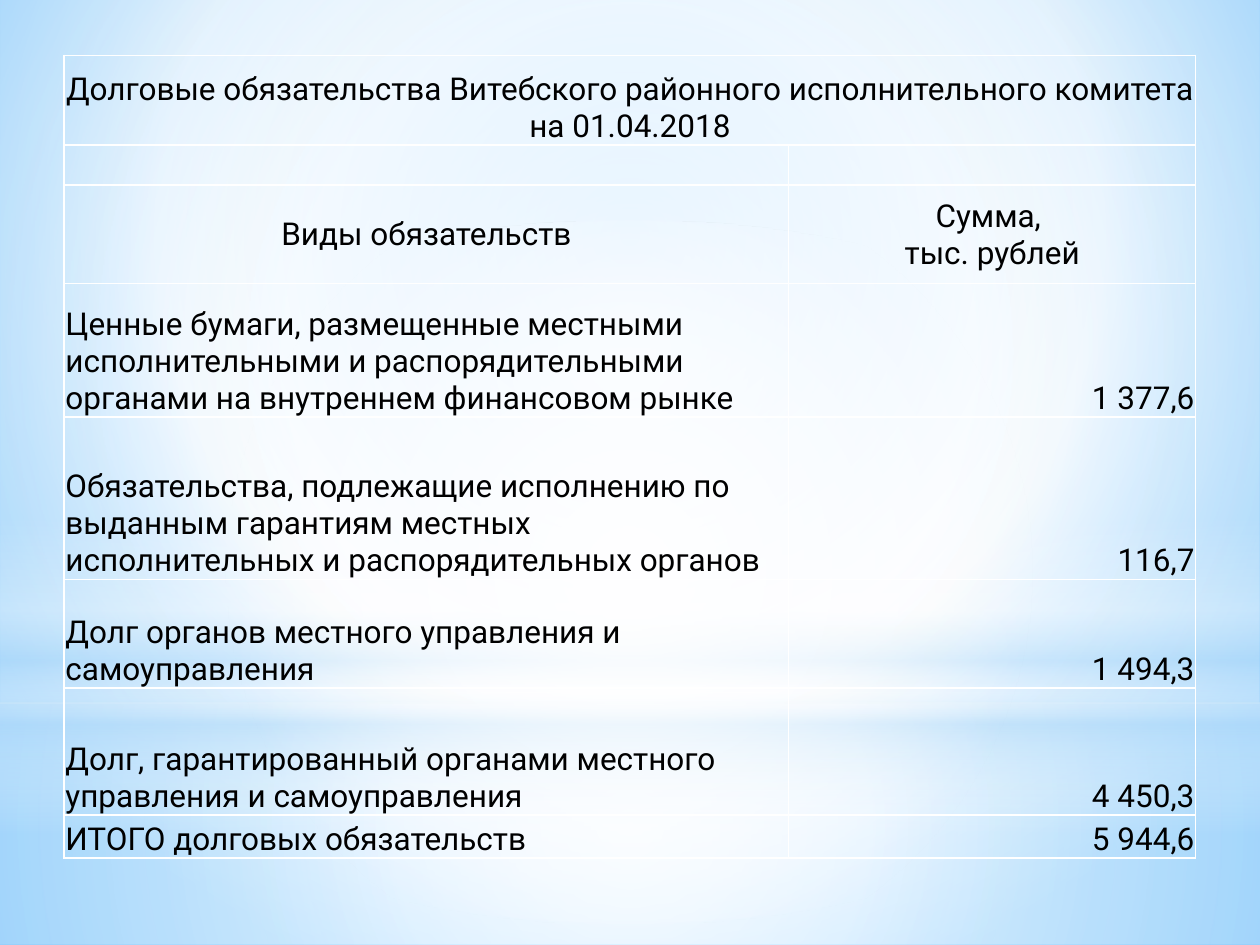
from lxml.etree import SubElement
from pptx import Presentation
from pptx.dml.color import RGBColor
from pptx.enum.shapes import MSO_SHAPE as Shape
from pptx.enum.text import MSO_ANCHOR as Anchor, PP_ALIGN as Align
from pptx.oxml import parse_xml
from pptx.oxml.ns import nsdecls, qn
from pptx.util import Inches, Pt

BLACK = RGBColor(0x00, 0x00, 0x00)
WHITE = RGBColor(0xFF, 0xFF, 0xFF)
SKY = RGBColor(0x9E, 0xD5, 0xFF)
DEEP_SKY = RGBColor(0x5B, 0xB9, 0xFF)
PALE_BLUE = RGBColor(0xB4, 0xDC, 0xFA)
FONT = "Roboto"
CENTRE = (50, 50, 50, 50)

COLUMN_WIDTHS = (5.75, 3.23)
ROW_HEIGHTS = (0.71, 0.32, 0.78, 1.06, 1.29, 0.86, 1.01, 0.34)
TITLE = "Долговые обязательства Витебского районного исполнительного комитета на 01.04.2018"
HEADINGS = ("Виды обязательств", "Сумма, \nтыс. рублей")
DEBTS = (
    ("Ценные бумаги, размещенные местными исполнительными и "
     "распорядительными органами на внутреннем финансовом рынке", "1 377,6"),
    ("Обязательства, подлежащие исполнению по выданным гарантиям местных "
     "исполнительных и распорядительных органов", "116,7"),
    ("Долг органов местного управления и самоуправления", "1 494,3"),
    ("Долг, гарантированный органами местного управления и самоуправления", "4 450,3"),
    ("ИТОГО долговых обязательств", "5 944,6"),
)


def set_gradient(fill, stops, focus=None, angle=0):
    """Stops are (position %, colour, opacity %); focus gives a circular gradient."""
    fill.gradient()
    gradient = fill._xPr.find(qn("a:gradFill"))
    for child in list(gradient):
        gradient.remove(child)
    stop_list = SubElement(gradient, qn("a:gsLst"))
    for position, colour, opacity in stops:
        stop = SubElement(stop_list, qn("a:gs"), pos=str(position * 1000))
        tint = SubElement(stop, qn("a:srgbClr"), val=str(colour))
        if opacity < 100:
            SubElement(tint, qn("a:alpha"), val=str(opacity * 1000))
    if focus:
        circle = SubElement(gradient, qn("a:path"), path="circle")
        edges = {side: str(inset * 1000) for side, inset in zip("ltrb", focus)}
        SubElement(circle, qn("a:fillToRect"), **edges)
    else:
        SubElement(gradient, qn("a:lin"), ang=str(angle * 60000), scaled="0")


def add_glow(slide, kind, top, height, stops, **direction):
    """Add a full-width translucent band of light."""
    glow = slide.shapes.add_shape(kind, 0, Inches(top), Inches(10), Inches(height))
    glow.shadow.inherit = False
    glow.line.fill.background()
    set_gradient(glow.fill, stops, **direction)


def add_backdrop(slide):
    set_gradient(slide.background.fill,
                 [(0, SKY, 100), (60, WHITE, 100), (100, DEEP_SKY, 100)],
                 focus=(20, 10, 20, 60))
    add_glow(slide, Shape.RECTANGLE, 5.58, 1.92,
             [(0, WHITE, 91), (37, WHITE, 76), (100, PALE_BLUE, 79)], focus=CENTRE)
    add_glow(slide, Shape.RECTANGLE, 0, 5.58,
             [(0, WHITE, 89), (48, WHITE, 62), (100, PALE_BLUE, 79)], focus=CENTRE)
    add_glow(slide, Shape.RECTANGLE, 4.12, 2.5,
             [(0, WHITE, 0), (29, WHITE, 30), (45, PALE_BLUE, 40),
              (55, WHITE, 26), (65, PALE_BLUE, 60), (100, WHITE, 0)], angle=90)
    add_glow(slide, Shape.OVAL, 1.75, 5.58,
             [(0, WHITE, 100), (56, WHITE, 0)], focus=CENTRE)


def format_cell(cell):
    """Clear the fill, tighten the margins and draw thin white borders."""
    cell.fill.background()
    cell.margin_left = cell.margin_right = cell.margin_top = Inches(0.01)
    cell.margin_bottom = 0
    properties = cell._tc.get_or_add_tcPr()
    for index, side in enumerate("LRTB"):
        properties.insert(index, parse_xml(
            f'<a:ln{side} {nsdecls("a")} w="{Pt(1)}"><a:solidFill>'
            f'<a:srgbClr val="{WHITE}"/></a:solidFill></a:ln{side}>'))


def write(cell, text, align=Align.LEFT, anchor=Anchor.BOTTOM, size=18, colour=BLACK):
    cell.vertical_anchor = anchor
    paragraph = cell.text_frame.paragraphs[0]
    paragraph.text = text
    paragraph.alignment = align
    for run in paragraph.runs:
        run.font.name = FONT
        run.font.size = Pt(size)
        run.font.color.rgb = colour


def add_debt_table(slide):
    table = slide.shapes.add_table(
        len(ROW_HEIGHTS), len(COLUMN_WIDTHS), Inches(0.51), Inches(0.44),
        Inches(sum(COLUMN_WIDTHS)), Inches(sum(ROW_HEIGHTS))).table
    table.first_row = table.horz_banding = False
    for column, width in zip(table.columns, COLUMN_WIDTHS):
        column.width = Inches(width)
    for row, height in zip(table.rows, ROW_HEIGHTS):
        row.height = Inches(height)
    for cell in table.iter_cells():
        format_cell(cell)

    table.cell(0, 0).merge(table.cell(0, 1))
    write(table.cell(0, 0), TITLE, align=Align.CENTER)
    for column, heading in enumerate(HEADINGS):
        write(table.cell(2, column), heading, align=Align.CENTER, anchor=Anchor.MIDDLE)
    for row, (debt, amount) in enumerate(DEBTS, start=3):
        write(table.cell(row, 0), debt)
        write(table.cell(row, 1), amount, align=Align.RIGHT)


def main():
    presentation = Presentation()
    presentation.slide_width = Inches(10)
    presentation.slide_height = Inches(7.5)
    slide = presentation.slides.add_slide(presentation.slide_layouts[6])
    add_backdrop(slide)
    add_debt_table(slide)
    presentation.save("out.pptx")


if __name__ == "__main__":
    main()
